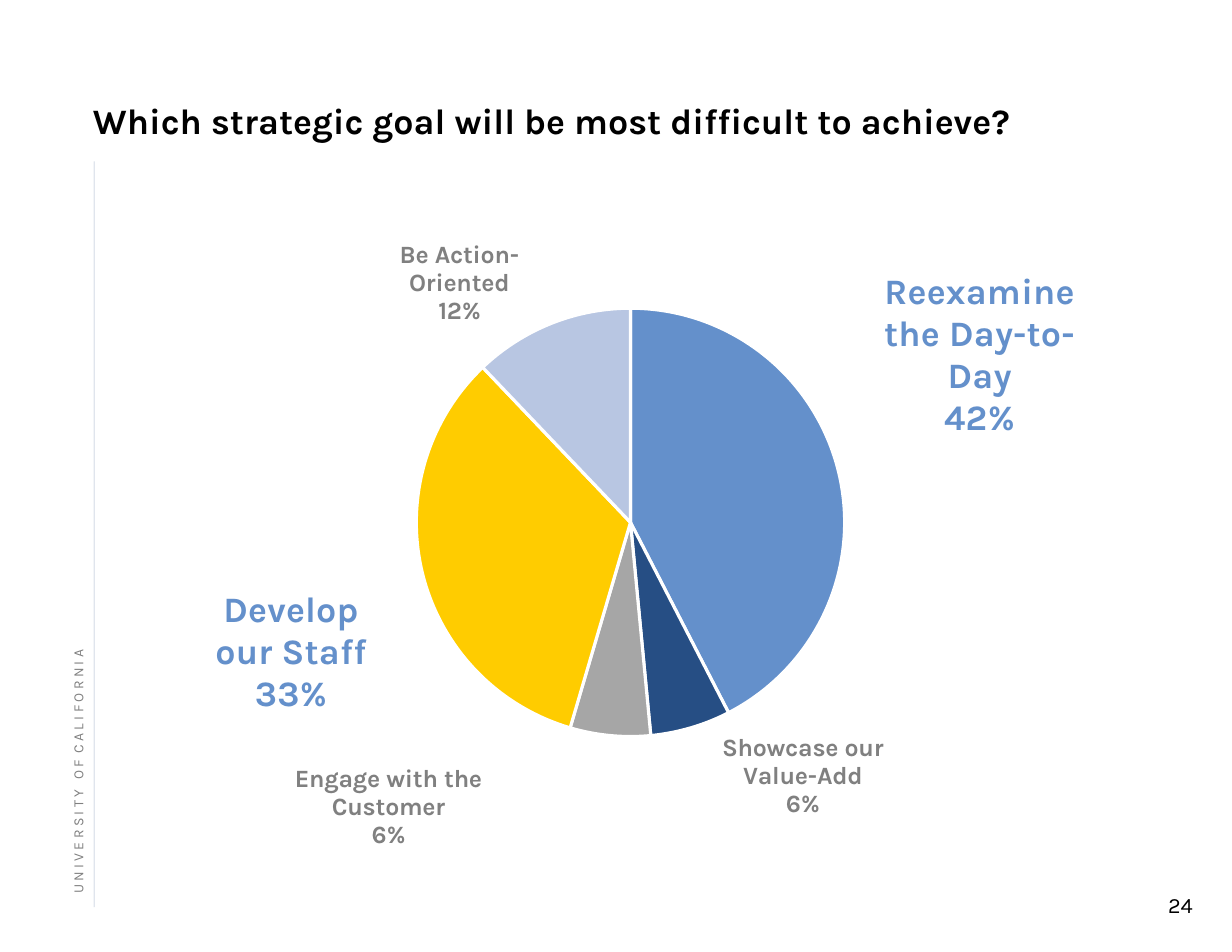
from typing import NamedTuple

from lxml.etree import SubElement
from pptx import Presentation
from pptx.chart.data import CategoryChartData
from pptx.dml.color import RGBColor
from pptx.enum.chart import XL_CHART_TYPE as ChartType, XL_LABEL_POSITION as LabelPosition
from pptx.enum.shapes import MSO_CONNECTOR as Connector
from pptx.enum.text import MSO_ANCHOR as Anchor, PP_ALIGN as Align
from pptx.oxml import parse_xml
from pptx.oxml.ns import nsdecls, qn
from pptx.util import Inches, Pt

COLORS = {
    "ink": "000000", "muted": "808080", "white": "FFFFFF", "navy": "264E84",
    "blue": "6490CB", "gray": "A6A6A6", "gold": "FFCC00", "pale": "B8C6E2",
}
FONT = "Karla"
UNIT = Inches(0.5)
COLUMNS, ROWS = 22, 17


class Box(NamedTuple):
    """Area measured in grid columns and rows."""
    left: float
    top: float
    width: float
    height: float

    def lengths(self):
        """Return the four measures as slide lengths."""
        return [round(value * UNIT) for value in self]


class Slice(NamedTuple):
    """One answer, with its label shift as shares of the chart."""
    name: str
    share: float
    color: str
    shift: tuple
    major: bool = False


GOALS = [
    Slice("Reexamine the Day-to-Day", 0.42, "blue", (0.04, -0.04), True),
    Slice("Showcase our Value-Add", 0.06, "navy", (0.03, 0)),
    Slice("Engage with the Customer", 0.06, "gray", (-0.13, 0.03)),
    Slice("Develop our Staff", 0.33, "gold", (-0.05, 0.02), True),
    Slice("Be Action-Oriented", 0.12, "pale", (-0.03, 0.01)),
]


def rgb(name):
    """Look up a colour by name."""
    return RGBColor.from_string(COLORS[name])


def style(font, size, color, bold=False):
    """Apply the slide's typeface with a size, colour and weight."""
    font.name, font.size, font.bold = FONT, Pt(size), bold
    font.color.rgb = rgb(color)


def add_text(page, box, text, size, color, bold=False, align=Align.LEFT,
             anchor=Anchor.BOTTOM, margin=0, wrap=True, spacing=None):
    """Place one line of text and return its shape."""
    shape = page.shapes.add_textbox(*box.lengths())
    frame = shape.text_frame
    frame.word_wrap, frame.vertical_anchor = wrap, anchor
    frame.margin_left = frame.margin_right = Inches(margin)
    frame.margin_top = frame.margin_bottom = Inches(margin / 2)
    frame.text = text
    para = frame.paragraphs[0]
    para.alignment = align
    if spacing:
        para.line_spacing = Pt(spacing)
    style(para.runs[0].font, size, color, bold)
    return shape


def add_side_rail(page, box):
    """Draw the vertical rule and the rotated name at its left."""
    left, top, width, height = box.lengths()
    rule = page.shapes.add_connector(
        Connector.STRAIGHT, left + width, top, left + width, top + height)
    rule.line.color.rgb, rule.line.width = rgb("navy"), Pt(0.35)
    tint = next(rule._element.spPr.iter(qn("a:srgbClr")))
    SubElement(tint, qn("a:alpha")).set("val", "40000")
    SubElement(rule._element.spPr, qn("a:effectLst"))
    length, depth = 8.66, 0.3
    center = box.left + box.width / 2
    middle = box.top + box.height - 0.24 - length / 2
    first, *others = [" ".join(word) for word in "UNIVERSITY OF CALIFORNIA".split()]
    name = add_text(
        page, Box(center - length / 2, middle - depth / 2, length, depth),
        first, 9, "muted", wrap=False, spacing=12)
    name.rotation = 270
    para = name.text_frame.paragraphs[0]
    for word, gap in zip(others, (440, 220)):
        for text, tracking in ((" ", gap), (word, 0)):
            span = para.add_run()
            span.text = text
            style(span.font, 9, "muted")
            span.font._element.set("spc", str(tracking))


def manual_layout(x, y, size=None):
    """Build a chart layout element from shares of the chart."""
    mode = ('<c:layoutTarget val="inner"/><c:xMode val="edge"/>'
            '<c:yMode val="edge"/>') if size else ""
    extent = f'<c:w val="{size[0]}"/><c:h val="{size[1]}"/>' if size else ""
    return parse_xml(
        f'<c:layout {nsdecls("c")}><c:manualLayout>{mode}<c:x val="{x}"/>'
        f'<c:y val="{y}"/>{extent}</c:manualLayout></c:layout>')


def label_slice(point, goal):
    """Show name and percentage beside a slice."""
    label = point.data_label
    style(label.font, 23 if goal.major else 16,
          "blue" if goal.major else "muted", True)
    label.position = LabelPosition.OUTSIDE_END
    element = label._dLbl
    element.find(qn("c:showCatName")).set("val", "1")
    element.find(qn("c:showVal")).set("val", "1")
    index = element.find(qn("c:idx"))
    number = parse_xml(
        f'<c:numFmt {nsdecls("c")} formatCode="0%" sourceLinked="0"/>')
    index.addnext(number)
    index.addnext(manual_layout(*goal.shift))
    SubElement(element, qn("c:separator")).text = "\n"


def add_goal_pie(page, box, goals):
    """Place the pie chart of answers in the given box."""
    data = CategoryChartData(number_format="0%")
    data.categories = [goal.name for goal in goals]
    data.add_series("Series 1", [goal.share for goal in goals])
    chart = page.shapes.add_chart(ChartType.PIE, *box.lengths(), data).chart
    chart.has_legend = chart.has_title = False
    style(chart.font, 18, "ink")
    plot = chart.plots[0]
    plot.vary_by_categories = True
    area = chart._chartSpace.chart.plotArea
    for layout in area.findall(qn("c:layout")):
        area.remove(layout)
    area.insert(0, manual_layout(0.3, 0.22, (0.44, 0.56)))
    series = plot.series[0]
    for index, goal in enumerate(goals):
        point = series.points[index]
        point.format.fill.solid()
        point.format.fill.fore_color.rgb = rgb(goal.color)
        point.format.line.color.rgb = rgb("white")
        point.format.line.width = Pt(2)
        label_slice(point, goal)
    labels = series.data_labels
    labels.show_value = labels.show_category_name = True
    leaders = labels._element.find(qn("c:showLeaderLines"))
    if leaders is None:
        leaders = SubElement(labels._element, qn("c:showLeaderLines"))
    leaders.set("val", "0")


def build_poll_slide(deck):
    """Compose the poll result slide."""
    page = deck.slides.add_slide(deck.slide_layouts[6])
    add_side_rail(page, Box(1.1, 2.88, 0.58, 13.32))
    add_text(page, Box(COLUMNS - 1.5, ROWS - 1.18, 1, 0.66), "24", 14, "ink",
             align=Align.RIGHT, anchor=Anchor.TOP, margin=0.1)
    add_text(page, Box(1.66, 1.88, 19, 0.64),
             "Which strategic goal will be most difficult to achieve?",
             23, "ink", bold=True, spacing=27.9)
    add_goal_pie(page, Box(2.16, 2.5, 17.5, 13.66), GOALS)


def main():
    """Create and save the deck."""
    deck = Presentation()
    deck.slide_width, deck.slide_height = COLUMNS * UNIT, ROWS * UNIT
    build_poll_slide(deck)
    deck.save("out.pptx")


if __name__ == "__main__":
    main()
